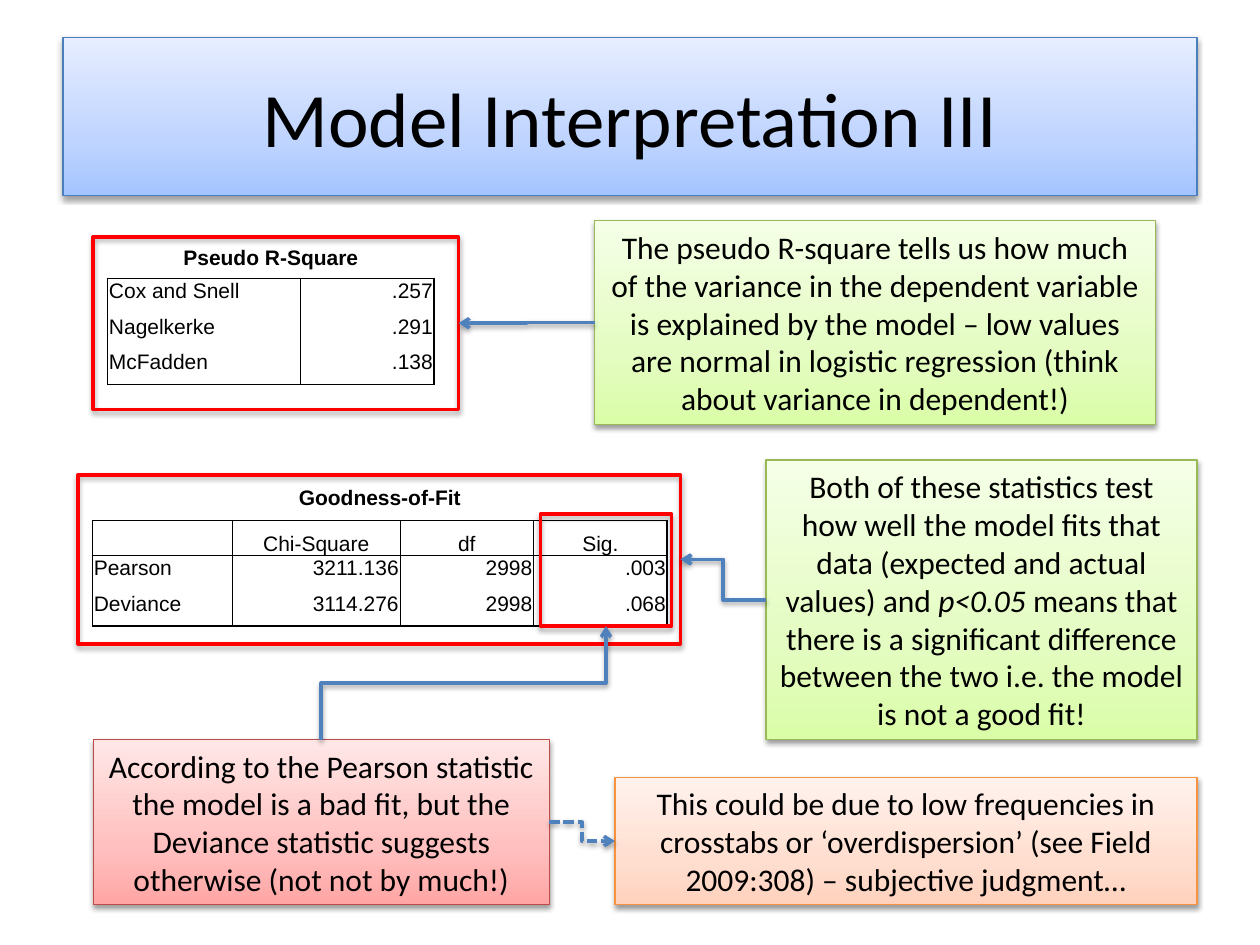
from copy import deepcopy
from lxml import etree
from pptx import Presentation, util as u
from pptx.dml.color import RGBColor
from pptx.enum import dml, shapes, text
from pptx.oxml import ns

WIDE, HIGH = u.Inches(10), u.Inches(7.5)
COL, ROW = WIDE / 40, HIGH / 30
TOP, LEFT, BASE, RIGHT = range(4)  # connection sites of a rectangle

HUES = {
    "ink": "000000", "frame": "FF0000", "arrow": "4F81BD",
    "blue": ("A4C4FF", "BFD4FF", "E6EEFF", "4B7EBC"),
    "green": ("DAFDA7", "E4FCC2", "F5FFE7", "98B955"),
    "red": ("FFA6A5", "FFC0BF", "FFE7E7", "BF4C48"),
    "orange": ("FFD2BD", "FFDED0", "FFF2ED", "F69240"),
}


def tint(name):
    return RGBColor.from_string(HUES.get(name, name))


def place(box):
    """Turn columns and rows of the grid into lengths."""
    x, y, w, h = box
    return [u.Emu(round(n)) for n in (x * COL, y * ROW, w * COL, h * ROW)]


def add(root, tag, **attrs):
    return etree.SubElement(root, ns.qn(tag), attrs)


def shade(props, alpha=38, dist=1.6):
    """Give shape properties a soft shadow that falls straight down."""
    list_ = props.find(ns.qn("a:effectLst"))
    if list_ is None:
        list_ = add(props, "a:effectLst")
    drop = add(list_, "a:outerShdw", blurRad=str(u.Pt(3.1)), dist=str(u.Pt(dist)),
               dir="5400000", rotWithShape="0")
    hue = add(drop, "a:srgbClr", val=HUES["ink"])
    add(hue, "a:alpha", val=str(alpha * 1000))


def rect(slide, box):
    shape = slide.shapes.add_shape(shapes.MSO_SHAPE.RECTANGLE, *place(box))
    shape.shadow.inherit = False
    return shape


def blend(shape, hues):
    """Fill from the bottom up with three hues."""
    shape.fill.gradient()
    shape.fill.gradient_angle = 90
    stops = shape._element.spPr.find(".//" + ns.qn("a:gsLst"))
    stops.append(deepcopy(stops[0]))
    for stop, hue, spot in zip(shape.fill.gradient_stops, hues, (0, 0.35, 1)):
        stop.color.rgb = tint(hue)
        stop.position = spot


def style(para, size, face, align, bold=False):
    para.alignment = align
    font = para.font
    font.size, font.name, font.bold = u.Pt(size), face, bold
    font.color.rgb = tint("ink")


def note(slide, box, hue, runs, size=18):
    """Draw a shaded box of text; every second run is italic."""
    shape = rect(slide, box)
    *fills, edge = HUES[hue]
    blend(shape, fills)
    shape.line.color.rgb = tint(edge)
    shape.line.width = u.Pt(0.75)
    shade(shape._element.spPr)
    frame = shape.text_frame
    frame.word_wrap = True
    frame.vertical_anchor = text.MSO_ANCHOR.MIDDLE
    para = frame.paragraphs[0]
    style(para, size, "Calibri", text.PP_ALIGN.CENTER)
    for i, words in enumerate(runs):
        run = para.add_run()
        run.text = words
        run.font.color.rgb = tint("ink")
        if i % 2:
            run.font.italic = True
    return shape


def outline(slide, box):
    shape = rect(slide, box)
    shape.fill.background()
    shape.line.color.rgb = tint("frame")
    shape.line.width = u.Pt(2)
    shade(shape._element.spPr, 35, 1.8)
    return shape


def edge(cell, **sides):
    """Set the borders of a cell in points; 0 is no line."""
    props = cell._tc.get_or_add_tcPr()
    for side in "LRTB":
        width = sides.get(side, 0)
        line = add(props, "a:ln" + side, w=str(u.Pt(width)))
        if width:
            add(add(line, "a:solidFill"), "a:srgbClr", val=HUES["ink"])
        else:
            add(line, "a:noFill")


def write(cell, words, align, anchor, bold):
    cell.margin_left = cell.margin_right = cell.margin_top = u.Inches(0.01)
    cell.margin_bottom = 0
    cell.vertical_anchor = anchor
    cell.text = words
    para = cell.text_frame.paragraphs[0]
    style(para, 12, "Arial", align, bold)
    if not words:
        add(para._p, "a:endParaRPr", sz="1200")


def panel(slide, box, title, rows, cols, cap, head=False):
    """Draw a titled table of results inside a red frame."""
    x, y, _, _ = box
    deep = 1.12
    last = len(rows)
    area = place((x + 0.46, y, sum(cols), cap + deep * last))
    table = slide.shapes.add_table(last + 1, len(cols), *area).table
    table.first_row = table.horz_banding = False
    for col, width in zip(table.columns, cols):
        col.width = u.Emu(round(width * COL))
    for i, row in enumerate(table.rows):
        row.height = u.Emu(round((deep if i else cap) * ROW))

    side, mid = text.PP_ALIGN, text.MSO_ANCHOR
    grid = [[title] + [""] * (len(cols) - 1)] + rows
    for i, row in enumerate(grid):
        top = head and i == 1
        for j, words in enumerate(row):
            cell = table.cell(i, j)
            if i == 0:
                edge(cell, B=1)
                write(cell, words, side.CENTER, mid.MIDDLE, True)
            else:
                edge(cell, L=0.5 if j > 1 else 1,
                     R=0.5 if 0 < j < len(cols) - 1 else 1,
                     T=1 if i == 1 or head and i == 2 else 0,
                     B=1 if top or i == last else 0)
                align = side.CENTER if top else side.RIGHT if j else side.LEFT
                write(cell, words, align, mid.BOTTOM if top else mid.TOP, False)
            cell.fill.background()
    table.cell(0, 0).merge(table.cell(0, len(cols) - 1))
    return outline(slide, box)


def link(slide, start, out, end, into, dash=False, turn=False):
    """Join two boxes with an elbow arrow; turn makes it leave upwards."""
    line = slide.shapes.add_connector(shapes.MSO_CONNECTOR.ELBOW, 0, 0, 0, 0)
    line.begin_connect(start, out)
    line.end_connect(end, into)
    if turn:
        x, y, w, h = line.left, line.top, line.width, line.height
        line.left, line.top = x + (w - h) // 2, y + (h - w) // 2
        line.width, line.height = h, w
        xfrm = line._element.spPr.find(ns.qn("a:xfrm"))
        for key, value in (("rot", "5400000"), ("flipH", "1"), ("flipV", "1")):
            xfrm.set(key, value)
    line.line.color.rgb = tint("arrow")
    line.line.width = u.Pt(2)
    if dash:
        line.line.dash_style = dml.MSO_LINE.SQUARE_DOT
    props = line._element.spPr
    add(props.find(ns.qn("a:ln")), "a:tailEnd", type="arrow")
    shade(props)


def main():
    deck = Presentation()
    deck.slide_width, deck.slide_height = WIDE, HIGH
    slide = deck.slides.add_slide(deck.slide_layouts[6])
    note(slide, (2, 1.2, 36, 5), "blue", ["Model Interpretation III"], 44)

    fit = panel(slide, (2.48, 15.08, 19.12, 5.36), "Goodness-of-Fit", [
        ["", "Chi-Square", "df", "Sig."],
        ["Pearson", "3211.136", "2998", ".003"],
        ["Deviance", "3114.276", "2998", ".068"],
    ], (4.44, 5.32, 4.24, 4.24), 1.44, head=True)
    pseudo = panel(slide, (2.96, 7.52, 11.6, 5.48), "Pseudo R-Square", [
        ["Cox and Snell", ".257"], ["Nagelkerke", ".291"], ["McFadden", ".138"],
    ], (6.12, 4.24), 1.32)
    sig = outline(slide, (17.16, 16.32, 4.16, 3.56))

    share = note(slide, (18.88, 7, 17.8, 6.48), "green", [
        "The pseudo R-square tells us how much of the variance in the dependent "
        "variable is explained by the model – low values are normal in logistic "
        "regression (think about variance in dependent!)"])
    test = note(slide, (24.32, 14.6, 13.68, 8.88), "green", [
        "Both of these statistics test how well the model fits that data "
        "(expected and actual values) and ", "p<0.05",
        " means that there is a significant difference between the two i.e. "
        "the model is not a good fit!"])
    clash = note(slide, (2.96, 23.48, 14.48, 5.24), "red", [
        "According to the Pearson statistic the model is a bad fit, but the "
        "Deviance statistic suggests otherwise (not not by much!)"])
    cause = note(slide, (19.52, 24.68, 18.48, 4.04), "orange", [
        "This could be due to low frequencies in crosstabs or ‘overdispersion’ "
        "(see Field 2009:308) – subjective judgment…"])

    link(slide, share, LEFT, pseudo, RIGHT)
    link(slide, test, LEFT, fit, RIGHT)
    link(slide, clash, TOP, sig, BASE, turn=True)
    link(slide, clash, RIGHT, cause, LEFT, dash=True)
    deck.save("out.pptx")


if __name__ == "__main__":
    main()
